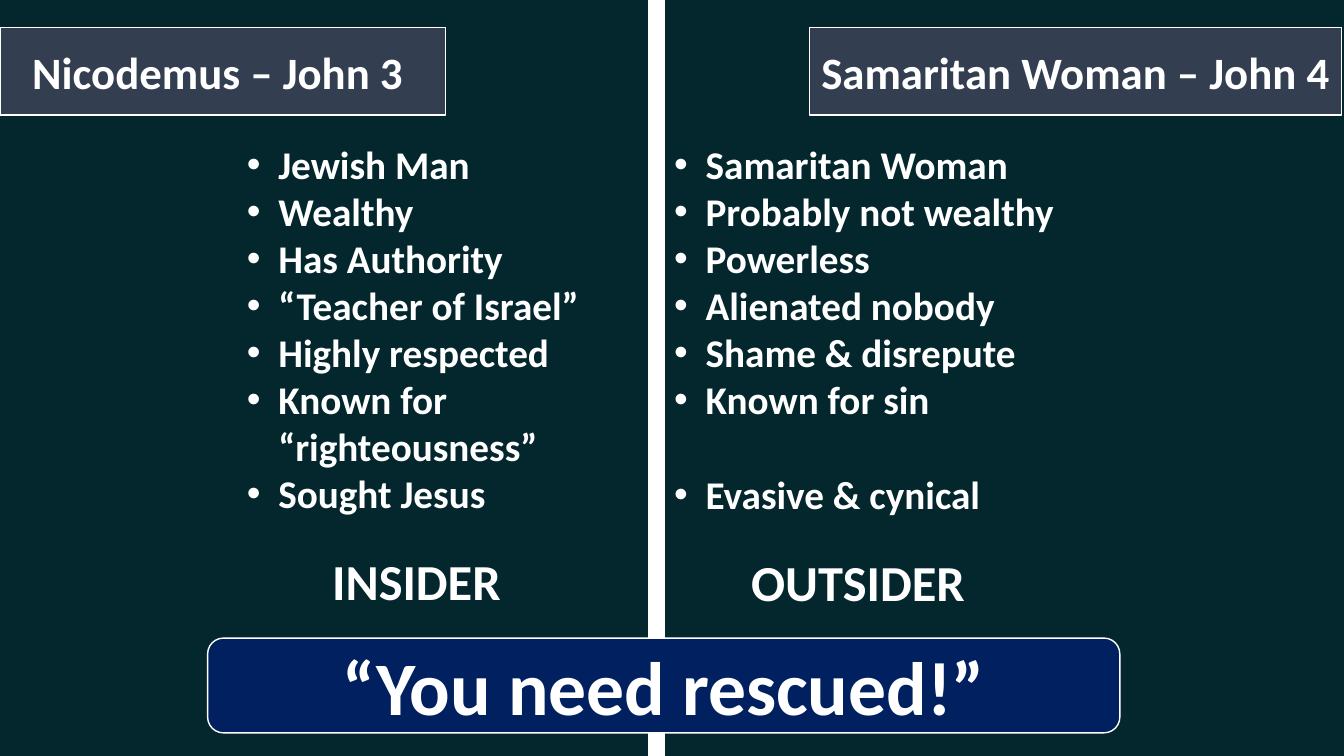
from dataclasses import dataclass

import pptx
import pptx.dml.color
import pptx.enum.shapes
import pptx.enum.text
import pptx.oxml
import pptx.oxml.ns
import pptx.util

Pt = pptx.util.Pt
RGB = pptx.dml.color.RGBColor
SHAPE = pptx.enum.shapes.MSO_SHAPE
ALIGN = pptx.enum.text.PP_ALIGN
ANCHOR = pptx.enum.text.MSO_ANCHOR

COLORS = {"background": "03272D", "heading": "333F50", "banner": "002060", "white": "FFFFFF"}
FONT = "Calibri"
HANGING = 22.5
BULLET_LINE = 34
VERDICT_GAP = 24


@dataclass
class Box:
    left: float
    top: float
    width: float
    height: float
    fill: str
    kind: SHAPE = SHAPE.RECTANGLE
    outlined: bool = True


@dataclass
class Label:
    box: Box
    text: str
    size: float


@dataclass
class Trait:
    text: str
    space_before: float = 0


@dataclass
class Column:
    left: float
    width: float
    traits: list[Trait]
    verdict: str
    verdict_indent: float


COLUMNS = [
    Column(169.2, 298.8, [
        Trait("Jewish Man"),
        Trait("Wealthy"),
        Trait("Has Authority"),
        Trait("“Teacher of Israel”"),
        Trait("Highly respected"),
        Trait("Known for “righteousness”"),
        Trait("Sought Jesus"),
    ], "INSIDER", 61),
    Column(474.5, 305.3, [
        Trait("Samaritan Woman"),
        Trait("Probably not wealthy"),
        Trait("Powerless"),
        Trait("Alienated nobody"),
        Trait("Shame & disrepute"),
        Trait("Known for sin"),
        Trait("Evasive & cynical", space_before=BULLET_LINE),
    ], "OUTSIDER", 55),
]
HEADINGS = [
    Label(Box(0, 19.5, 318.2, 62.6, "heading"), "Nicodemus – John 3 ", 32),
    Label(Box(578.2, 19.5, 380.2, 62.6, "heading"), "Samaritan Woman – John 4 ", 32),
]
DIVIDER = Box(463.7, 0, 10.8, 540, "white")
BANNER = Label(
    Box(148.3, 455.8, 651.6, 67.7, "banner", SHAPE.ROUNDED_RECTANGLE), "“You need rescued!”", 54
)


def color(name: str) -> RGB:
    return RGB.from_string(COLORS[name])


def add_box(s, box: Box):
    sp = s.shapes.add_shape(
        box.kind, Pt(box.left), Pt(box.top), Pt(box.width), Pt(box.height)
    )
    sp.shadow.inherit = False
    sp.fill.solid()
    sp.fill.fore_color.rgb = color(box.fill)
    if box.outlined:
        sp.line.color.rgb = color("white")
        sp.line.width = Pt(1)
    else:
        sp.line.fill.background()
    return sp


def add_text(tf, text: str, *, size: float, align=ALIGN.LEFT, space_before: float = 0,
             margin: float = 0, bullet: bool = False) -> None:
    """Fill the frame's first paragraph, or append one if it already has text."""
    p = tf.add_paragraph() if tf.text else tf.paragraphs[0]
    p.alignment = align
    p.space_before = Pt(space_before)
    pPr = p._p.get_or_add_pPr()
    pPr.set("marL", str(Pt(margin)))
    if bullet:
        pPr.set("indent", str(Pt(-margin)))
        for tag, attr, value in (("a:buFont", "typeface", "Arial"), ("a:buChar", "char", "•")):
            mark = pptx.oxml.parse_xml(f"<{tag} {pptx.oxml.ns.nsdecls('a')}/>")
            mark.set(attr, value)
            pPr.append(mark)
    r = p.add_run()
    r.text = text
    r.font.name = FONT
    r.font.size = Pt(size)
    r.font.bold = True
    r.font.color.rgb = color("white")


def add_label(s, label: Label) -> None:
    tf = add_box(s, label.box).text_frame
    tf.word_wrap = True
    tf.vertical_anchor = ANCHOR.MIDDLE
    add_text(tf, label.text, size=label.size, align=ALIGN.CENTER)


def add_column(s, column: Column) -> None:
    box = Box(column.left, 96.5, column.width, 455.8, "background", outlined=False)
    tf = add_box(s, box).text_frame
    tf.word_wrap = True
    tf.vertical_anchor = ANCHOR.TOP
    for trait in column.traits:
        add_text(tf, trait.text, size=28, space_before=trait.space_before,
                 margin=HANGING, bullet=True)
    add_text(tf, column.verdict, size=36, space_before=VERDICT_GAP, margin=column.verdict_indent)


def main() -> None:
    prs = pptx.Presentation()
    prs.slide_width, prs.slide_height = Pt(960), Pt(540)
    s = prs.slides.add_slide(prs.slide_layouts[6])
    s.background.fill.solid()
    s.background.fill.fore_color.rgb = color("background")
    for column in COLUMNS:
        add_column(s, column)
    for heading in HEADINGS:
        add_label(s, heading)
    add_box(s, DIVIDER)
    add_label(s, BANNER)
    prs.save("out.pptx")


if __name__ == "__main__":
    main()
